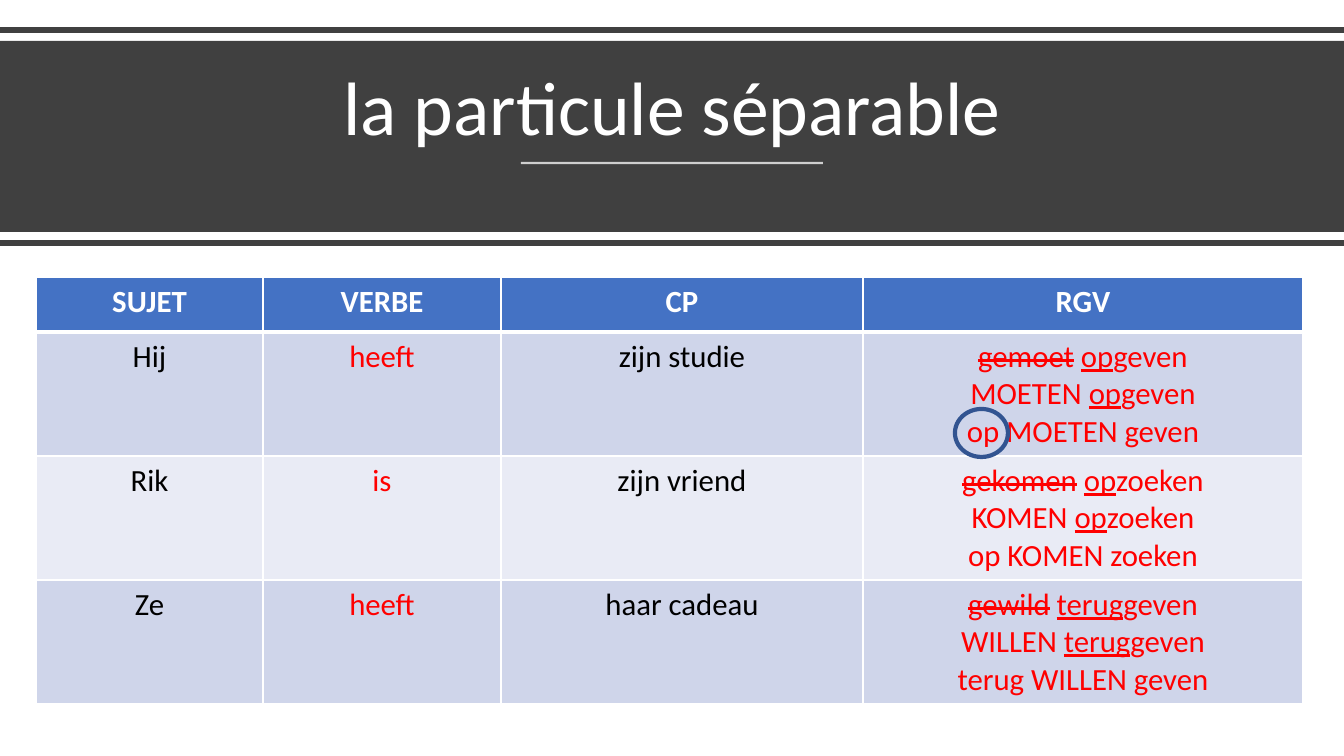
from dataclasses import dataclass

from lxml import etree
from pptx import Presentation
from pptx import util as u
from pptx.dml import color
from pptx.enum import shapes, text
from pptx.oxml import ns


@dataclass(frozen=True)
class Theme:
    font: str = "Calibri"
    title_size: int = 54
    table_size: int = 22
    dark: str = "404040"
    white: str = "FFFFFF"
    black: str = "000000"
    red: str = "FF0000"
    header: str = "4472C4"
    bands: tuple = ("CFD5EA", "E9EBF5")
    ring: str = "325491"


PX = 914400 / 100.8


def px(length):
    return u.Emu(round(length * PX))


def rgb(value):
    return color.RGBColor.from_string(value)


class Slide:
    def __init__(self, deck, theme):
        self.theme = theme
        self.shapes = deck.slides.add_slide(deck.slide_layouts[6]).shapes

    def line(self, left, right, y, hue, width, opacity=100):
        rule = self.shapes.add_connector(
            shapes.MSO_CONNECTOR.STRAIGHT, px(left), px(y), px(right), px(y))
        rule.line.color.rgb = rgb(hue)
        rule.line.width = u.Pt(width)
        properties = rule._element.spPr
        etree.SubElement(properties, ns.qn("a:effectLst"))
        if opacity < 100:
            fill = next(properties.iter(ns.qn("a:srgbClr")))
            etree.SubElement(fill, ns.qn("a:alpha"), val=str(opacity * 1000))

    def shape(self, kind, box, fill=None, outline=None, width=0):
        figure = self.shapes.add_shape(kind, *map(px, box))
        figure.shadow.inherit = False
        if fill:
            figure.fill.solid()
            figure.fill.fore_color.rgb = rgb(fill)
        else:
            figure.fill.background()
        if outline:
            figure.line.color.rgb = rgb(outline)
            figure.line.width = u.Pt(width)
        else:
            figure.line.fill.background()

    def paragraph(self, paragraph, runs, size, hue, bold=False):
        paragraph.alignment = text.PP_ALIGN.CENTER
        font = paragraph.font
        font.name, font.size, font.bold = self.theme.font, u.Pt(size), bold
        font.color.rgb = rgb(hue)
        for wording, mark in runs:
            run = paragraph.add_run()
            run.text = wording
            if mark == "underline":
                run.font.underline = True
            elif mark == "strike":
                run._r.get_or_add_rPr().set("strike", "sngStrike")

    def title(self, box, wording):
        frame = self.shapes.add_textbox(*map(px, box)).text_frame
        frame.word_wrap = True
        frame.vertical_anchor = text.MSO_ANCHOR.BOTTOM
        heading = frame.paragraphs[0]
        heading.line_spacing = 0.9
        self.paragraph(heading, [(wording, None)], self.theme.title_size, self.theme.white)

    def borders(self, cell, bottom):
        properties = cell._tc.get_or_add_tcPr()
        for side, width in (("L", 1), ("R", 1), ("T", 1), ("B", bottom)):
            edge = etree.SubElement(properties, ns.qn(f"a:ln{side}"), w=str(int(u.Pt(width))))
            fill = etree.SubElement(edge, ns.qn("a:solidFill"))
            etree.SubElement(fill, ns.qn("a:srgbClr"), val=self.theme.white)

    def cell(self, cell, lines, fill, hue, header=False):
        self.borders(cell, 3 if header else 1)
        cell.fill.solid()
        cell.fill.fore_color.rgb = rgb(fill)
        cell.margin_left = cell.margin_right = px(12)
        cell.margin_top = cell.margin_bottom = px(6)
        frame = cell.text_frame
        for index, runs in enumerate(lines):
            paragraph = frame.add_paragraph() if index else frame.paragraphs[0]
            self.paragraph(paragraph, runs, self.theme.table_size, hue, header)

    def table(self, left, top, widths, heights, headings, rows):
        theme = self.theme
        grid = self.shapes.add_table(
            len(heights), len(widths), px(left), px(top),
            px(sum(widths)), px(sum(heights))).table
        for column, width in zip(grid.columns, widths):
            column.width = px(width)
        for row, height in zip(grid.rows, heights):
            row.height = px(height)
        for c, heading in enumerate(headings):
            self.cell(grid.cell(0, c), [[(heading, None)]], theme.header, theme.white, True)
        hues = (theme.black, theme.red, theme.black, theme.red)
        for r, row in enumerate(rows):
            for c, (lines, hue) in enumerate(zip(row, hues)):
                self.cell(grid.cell(r + 1, c), lines, theme.bands[r % 2], hue)


def sentence(subject, verb, complement, participle, infinitive, particle, stem):
    separable = [(particle, "underline"), (stem, None)]
    rejected_group = [
        [(participle, "strike"), (" ", None), *separable],
        [(infinitive + " ", None), *separable],
        [(f"{particle} {infinitive} {stem}", None)],
    ]
    return [[[(part, None)]] for part in (subject, verb, complement)] + [rejected_group]


SENTENCES = [
    sentence("Hij", "heeft", "zijn studie", "gemoet", "MOETEN", "op", "geven"),
    sentence("Rik", "is", "zijn vriend", "gekomen", "KOMEN", "op", "zoeken"),
    sentence("Ze", "heeft", "haar cadeau", "gewild", "WILLEN", "terug", "geven"),
]


def main():
    deck = Presentation()
    deck.slide_width, deck.slide_height = px(1344), px(756)
    theme = Theme()
    slide = Slide(deck, theme)

    for edge in (30, 243):
        slide.line(0, 1344, edge, theme.dark, 4)
    slide.shape(shapes.MSO_SHAPE.RECTANGLE, (0, 41, 1344, 191), fill=theme.dark)
    slide.title((58, 54, 1228, 103), "la particule séparable")
    slide.line(521, 823, 163, theme.white, 1.5, opacity=75)

    slide.table(36, 277, (227, 238, 362, 440), (55, 124, 124, 124),
                ("SUJET", "VERBE", "CP", "RGV"), SENTENCES)
    slide.shape(shapes.MSO_SHAPE.OVAL, (955, 409, 53, 48), outline=theme.ring, width=3)

    deck.save("out.pptx")


if __name__ == "__main__":
    main()
